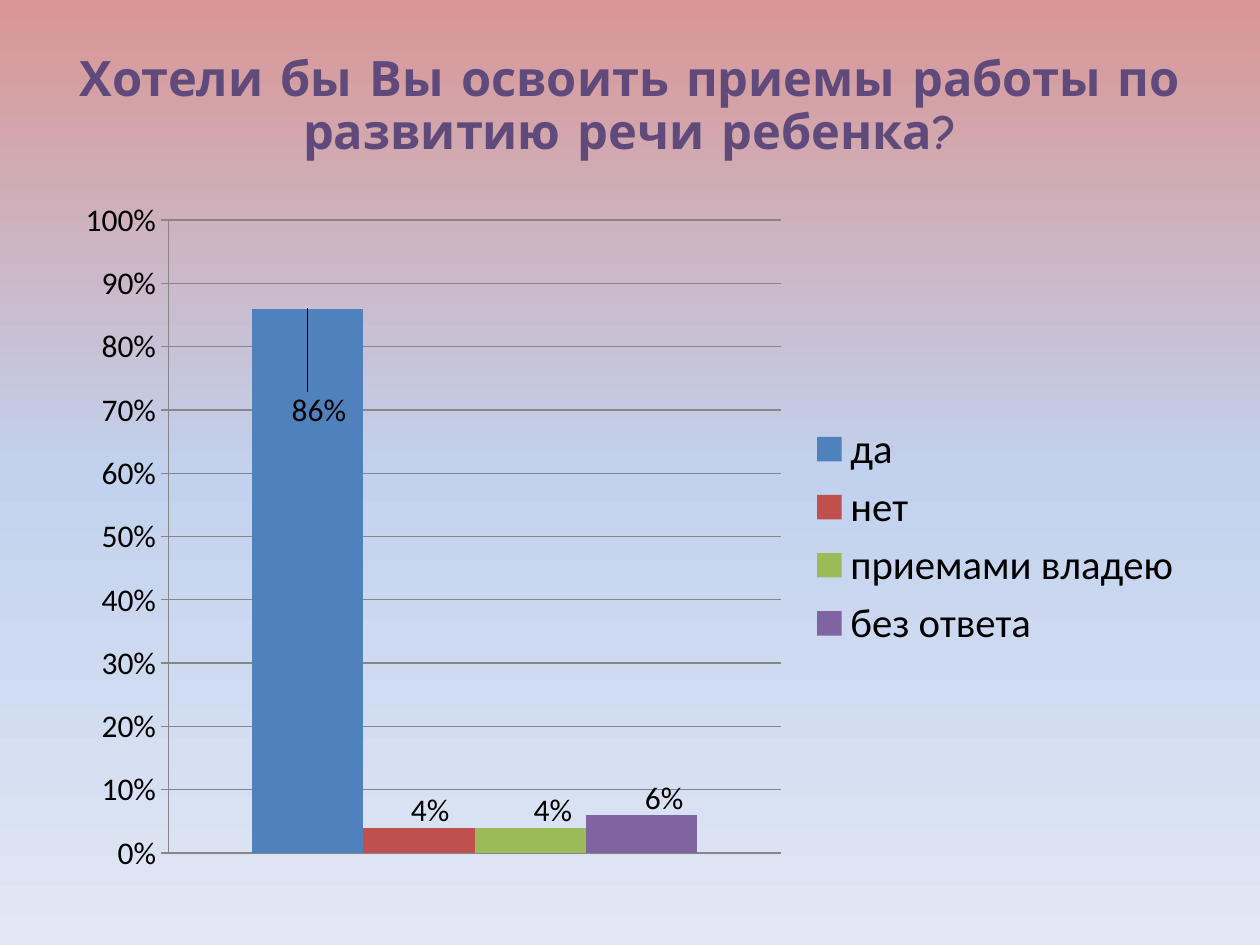
from copy import deepcopy

from lxml import etree
from pptx import Presentation
from pptx.chart.data import CategoryChartData
from pptx.dml.color import RGBColor
from pptx.enum.chart import XL_CHART_TYPE, XL_LABEL_POSITION, XL_LEGEND_POSITION, XL_TICK_MARK
from pptx.enum.text import MSO_ANCHOR, PP_ALIGN
from pptx.oxml import parse_xml
from pptx.oxml.ns import nsdecls, qn
from pptx.util import Cm, Pt

COLUMNS = XL_CHART_TYPE.COLUMN_CLUSTERED
OUTSIDE = XL_LABEL_POSITION.OUTSIDE_END
RIGHT = XL_LEGEND_POSITION.RIGHT
CROSS = XL_TICK_MARK.CROSS
MIDDLE = MSO_ANCHOR.MIDDLE
CENTER = PP_ALIGN.CENTER

COLORS = {
    "top": "D99694", "middle": "C2D1ED", "bottom": "E1E8F5",
    "title": "604A7B", "text": "000000", "grid": "868686",
    "blue": "4F81BD", "red": "C0504D", "green": "9BBB59", "purple": "8064A2",
}

# Name, value, colour and label offset as a share of the chart size
ANSWERS = [
    ("да", 0.86, "blue", 0.01, 0.18),
    ("нет", 0.04, "red", 0.01, 0.01),
    ("приемами владею", 0.04, "green", 0.02, 0.01),
    ("без ответа", 0.06, "purple", 0.02, 0.01),
]


def rgb(name):
    return RGBColor.from_string(COLORS[name])


def write(tf, text, size=18, font="Calibri", color="text", bold=False, align=CENTER, spacing=1.0):
    p = tf.paragraphs[0]
    p.alignment = align
    p.line_spacing = spacing
    r = p.add_run()
    r.text = text
    r.font.size = Pt(size)
    r.font.name = font
    r.font.bold = bold
    r.font.color.rgb = rgb(color)


prs = Presentation()
prs.slide_width, prs.slide_height = Cm(25.4), Cm(19.05)
slide = prs.slides.add_slide(prs.slide_layouts[5])

# Background gradient, top to bottom
fill = slide.background.fill
fill.gradient()
fill.gradient_angle = 270
stops = next(slide.element.iter(qn("a:gsLst")))
stops.append(deepcopy(stops[-1]))
for stop, position, name in zip(fill.gradient_stops, (0, 0.5, 1), ("top", "middle", "bottom")):
    stop.position = position
    stop.color.rgb = rgb(name)

# Title
sp = slide.shapes.title
sp.left, sp.top, sp.width, sp.height = Cm(1.27), Cm(0.76), Cm(22.86), Cm(3.18)
tf = sp.text_frame
tf.word_wrap = True
tf.vertical_anchor = MIDDLE
tf.margin_bottom = Cm(0.5)
write(tf, "Хотели бы Вы освоить приемы работы по развитию речи ребенка?",
      size=27.9, font="Comic Neue", color="title", bold=True, spacing=0.9)

# Chart
data = CategoryChartData(number_format="0%")
data.categories = ["1"]
for name, value, *_ in ANSWERS:
    data.add_series(name, [value])
chart = slide.shapes.add_chart(COLUMNS, Cm(1.27), Cm(3.76), Cm(22.86), Cm(14.1), data).chart
chart.has_title = False
chart.font.size = Pt(18)
chart.font.name = "Calibri"
chart.font.color.rgb = rgb("text")

# Plot area
area = chart.plots[0]
area.gap_width = 150
area.overlap = 0
area.vary_by_categories = False
plot_area = next(chart.element.iter(qn("c:plotArea")))
for old in plot_area.findall(qn("c:layout")):
    plot_area.remove(old)
layout = parse_xml(
    f'<c:layout {nsdecls("c")}><c:manualLayout><c:layoutTarget val="inner"/>'
    '<c:xMode val="edge"/><c:yMode val="edge"/></c:manualLayout></c:layout>')
for tag, share in (("x", 0.093), ("y", 0.048), ("w", 0.54), ("h", 0.905)):
    etree.SubElement(layout[0], qn(f"c:{tag}")).set("val", str(share))
plot_area.insert(0, layout)

# Axes
chart.category_axis.visible = False
axis = chart.value_axis
axis.minimum_scale, axis.maximum_scale, axis.major_unit = 0, 1, 0.1
axis.major_tick_mark = CROSS
axis.tick_labels.number_format = "0%"
axis.tick_labels.number_format_is_linked = False
axis.has_major_gridlines = True
for line in (axis.format.line, axis.major_gridlines.format.line):
    line.color.rgb = rgb("grid")
    line.width = Pt(0.75)

# Columns and their shifted labels
for series, (_, _, color, dx, dy) in zip(area.series, ANSWERS):
    series.format.fill.solid()
    series.format.fill.fore_color.rgb = rgb(color)
    labels = series.data_labels
    labels.show_value = True
    labels.number_format = "0%"
    labels.number_format_is_linked = False
    series.points[0].data_label.position = OUTSIDE
    label = next(series.points[0].data_label.font and series._element.iter(qn("c:dLbl")))
    label.insert(1, parse_xml(
        f'<c:layout {nsdecls("c")}><c:manualLayout><c:x val="{dx}"/><c:y val="{dy}"/>'
        '</c:manualLayout></c:layout>'))

# Legend
chart.has_legend = True
chart.legend.position = RIGHT
chart.legend.include_in_layout = False
chart.legend.font.size = Pt(23.3)
chart.legend.font.name = "Calibri"
chart.legend.font.color.rgb = rgb("text")

prs.save("out.pptx")
